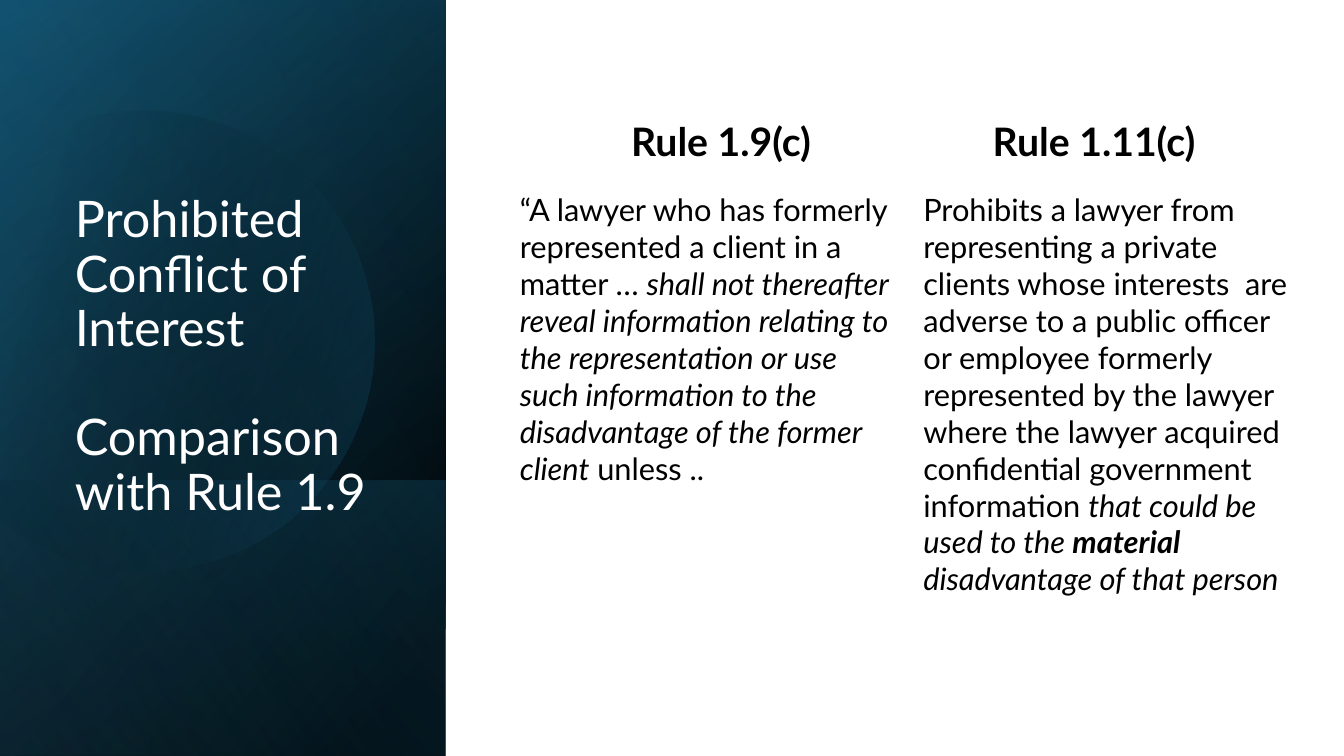
from dataclasses import dataclass
from math import cos, radians, sin, tan

from lxml.etree import SubElement
from pptx import Presentation
from pptx.dml.color import RGBColor
from pptx.enum.shapes import MSO_SHAPE as Shape
from pptx.enum.text import MSO_ANCHOR as Anchor, MSO_AUTO_SIZE as AutoSize, PP_ALIGN as Align
from pptx.oxml.ns import qn
from pptx.util import Cm, Pt


@dataclass(frozen=True)
class Theme:
    font: str = "Lato"
    title_size: int = 36
    heading_size: int = 28
    body_size: int = 22
    text: str = "000000"
    title: str = "FFFFFF"
    dark: str = "000000"
    navy: str = "104862"
    teal: str = "156082"
    sky: str = "46B1E1"


class SlideBuilder:
    def __init__(self, slide, theme):
        self.slide = slide
        self.theme = theme

    def paint(self, shape, stops, angle):
        shape.shadow.inherit = False
        shape.line.fill.background()
        shape.fill.gradient()
        gradient = shape.element.spPr.find(qn("a:gradFill"))
        for child in list(gradient):
            gradient.remove(child)
        gradient.set("rotWithShape", "1")
        stop_list = SubElement(gradient, qn("a:gsLst"))
        for position, color, opacity in stops:
            stop = SubElement(stop_list, qn("a:gs"), pos=str(position * 1000))
            tint = SubElement(stop, qn("a:srgbClr"), val=color)
            if opacity < 100:
                SubElement(tint, qn("a:alpha"), val=str(opacity * 1000))
        SubElement(gradient, qn("a:lin"), ang=str(angle * 60000), scaled="0")

    def panel(self, top, width, height, stops, angle):
        left = (width - height) / 2
        turned_top = top + (height - width) / 2
        panel = self.slide.shapes.add_shape(
            Shape.RECTANGLE, Cm(left), Cm(turned_top), Cm(height), Cm(width))
        panel.rotation = 90
        panel.element.spPr.find(qn("a:xfrm")).set("flipH", "1")
        self.paint(panel, stops, angle)

    def cut_disc(self, center_x, center_y, radius, turns, rotation, stops, angle):
        def spot(turn, bend=0):
            across, down = cos(radians(turn)), sin(radians(turn))
            return (Cm(center_x + radius * (across - bend * down)),
                    Cm(center_y + radius * (down + bend * across)))

        outline = self.slide.shapes.build_freeform(*spot(turns[0]), scale=1.0)
        outline.add_line_segments([spot(turn) for turn in turns[1:]], close=True)
        disc = outline.convert_to_shape()
        lines = list(disc.element.iter(qn("a:lnTo")))
        for line, start, end in zip(lines, turns, turns[1:]):
            bend = 4 / 3 * tan(radians(end - start) / 4)
            line.tag = qn("a:cubicBezTo")
            line.remove(line[0])
            for x, y in (spot(start, bend), spot(end, -bend), spot(end)):
                SubElement(line, qn("a:pt"), x=str(x - disc.left), y=str(y - disc.top))
        disc.rotation = rotation
        self.paint(disc, stops, angle)

    def style(self, para, size, color):
        para.font.name = self.theme.font
        para.font.size = Pt(size)
        para.font.color.rgb = RGBColor.from_string(color)

    def title(self, left, top, width, height, lines):
        box = self.slide.shapes.title
        box.element.getparent().append(box.element)
        box.left, box.top, box.width, box.height = map(Cm, (left, top, width, height))
        frame = box.text_frame
        frame.auto_size = AutoSize.NONE
        frame.word_wrap = True
        frame.vertical_anchor = Anchor.BOTTOM
        frame.text = "\n".join(lines)
        for index, para in enumerate(frame.paragraphs):
            para.alignment = Align.LEFT
            para.line_spacing = 0.9
            para.space_before = Pt(39 if index else 0)
            self.style(para, self.theme.title_size, self.theme.title)

    def text(self, left, top, width, height, spans, size, align=Align.LEFT, bold=False):
        box = self.slide.shapes.add_textbox(Cm(left), Cm(top), Cm(width), Cm(height))
        frame = box.text_frame
        frame.word_wrap = True
        para = frame.paragraphs[0]
        para.alignment = align
        para.space_after = Pt(6)
        self.style(para, size, self.theme.text)
        para.font.bold = bold
        for words, emphasis in spans:
            span = para.add_run()
            span.text = words
            if "i" in emphasis:
                span.font.italic = True
            if "b" in emphasis:
                span.font.bold = True

    def column(self, heading, heading_left, body_left, body_width, spans):
        self.text(heading_left, 2.84, 9.1, 1.83, [(heading, "")],
                  self.theme.heading_size, Align.CENTER, True)
        self.text(body_left, 4.68, body_width, 8.94, spans, self.theme.body_size)


def main():
    deck = Presentation()
    deck.slide_width, deck.slide_height = Cm(33.87), Cm(19.05)
    theme = Theme()
    page = SlideBuilder(deck.slides.add_slide(deck.slide_layouts[5]), theme)

    width, height, foot = 11.23, 19.05, 6.95
    page.panel(0, width, height, [(8, theme.dark, 100), (100, theme.navy, 100)], 50)
    page.panel(0, width, height, [(0, theme.dark, 0), (99, theme.teal, 46)], 30)
    page.panel(height - foot, width, foot,
               [(2, theme.teal, 29), (100, theme.dark, 30)], 130)
    page.cut_disc(3.63, 8.49, 5.8, (-118, -90, 0, 90, 150), 343.9,
                  [(29, theme.dark, 0), (100, theme.teal, 43)], 30)
    page.panel(0, width, height, [(0, theme.dark, 0), (99, theme.sky, 11)], 120)

    page.title(1.63, 4.67, 8.66, 8.59,
               ["Prohibited Conflict of Interest", "Comparison with Rule 1.9"])
    page.column("Rule 1.9(c)", 13.62, 12.85, 9.86, [
        ("“A lawyer who has formerly represented a client in a matter … ", ""),
        ("shall not thereafter reveal information relating to the representation or use "
         "such information to the disadvantage of the former client", "i"),
        (" unless ..", ""),
    ])
    page.column("Rule 1.11(c)", 23.02, 23.02, 9.91, [
        ("Prohibits a lawyer from representing a private clients whose interests  are "
         "adverse to a public officer or employee formerly represented by the lawyer "
         "where the lawyer acquired confidential government information ", ""),
        ("that could be used to the ", "i"),
        ("material", "ib"),
        (" disadvantage of that person", "i"),
    ])
    deck.save("out.pptx")


if __name__ == "__main__":
    main()
